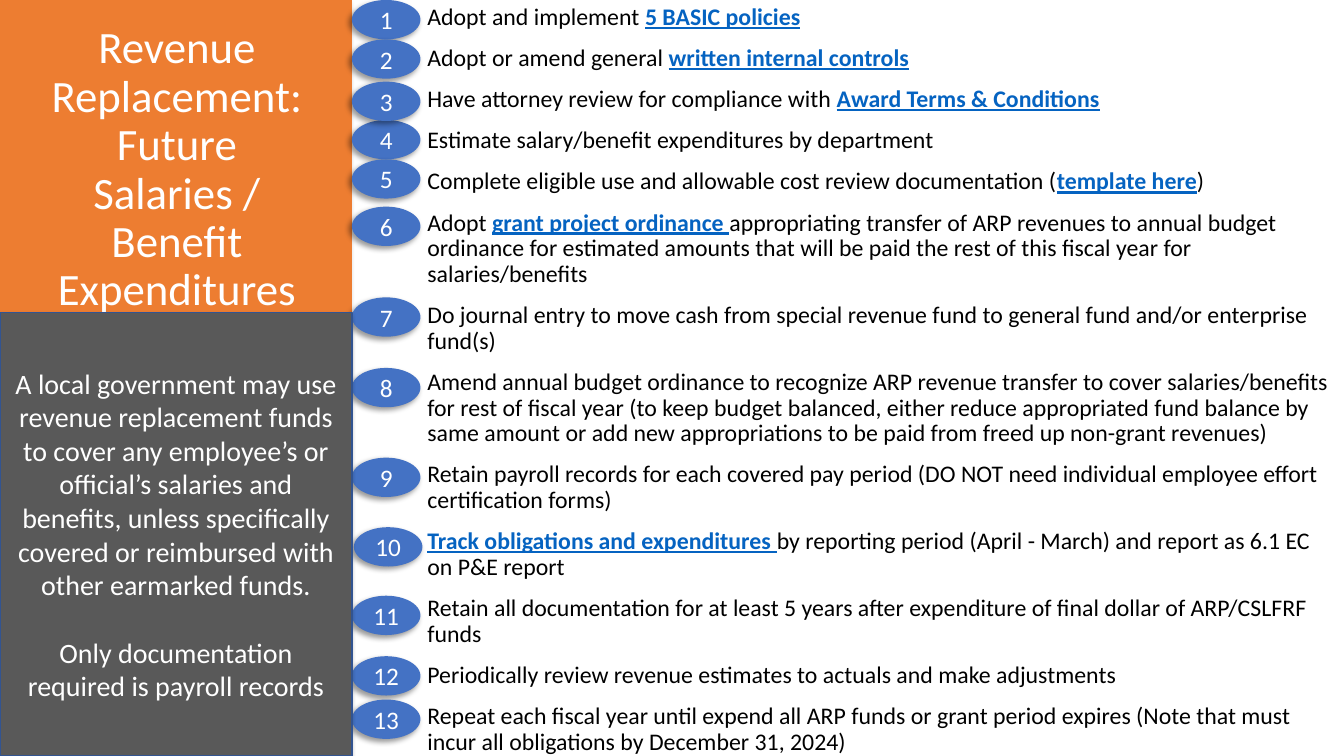
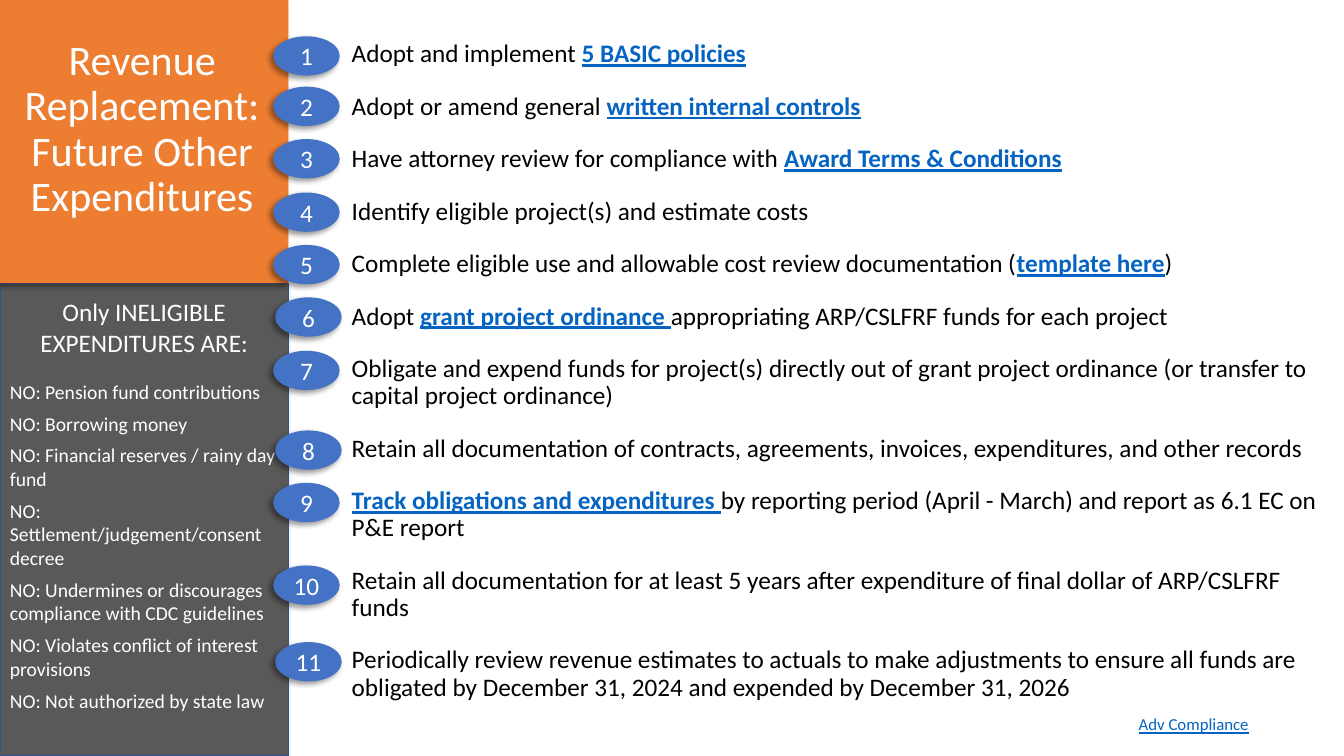
from lxml import etree
from pptx import Presentation
from pptx.dml.color import RGBColor
from pptx.enum.shapes import MSO_SHAPE
from pptx.enum.text import MSO_ANCHOR, PP_ALIGN
from pptx.oxml.ns import qn
from pptx.util import Inches, Pt

RECTANGLE, OVAL = MSO_SHAPE.RECTANGLE, MSO_SHAPE.OVAL
TOP, MIDDLE = MSO_ANCHOR.TOP, MSO_ANCHOR.MIDDLE
LEFT, CENTER = PP_ALIGN.LEFT, PP_ALIGN.CENTER

COLORS = {
    "orange": "ED7D31", "gray": "595959", "gray_edge": "325491", "blue": "4472C4",
    "link": "0563C1", "black": "000000", "white": "FFFFFF",
}
FONT = "Calibri"
BADGE_HEIGHT = 0.39

POLICIES = "Adopt and implement *5 BASIC policies*"
CONTROLS = "Adopt or amend general *written internal controls*"
ATTORNEY = "Have attorney review for compliance with *Award Terms & Conditions*"
COST_REVIEW = ("Complete eligible use and allowable cost review documentation "
               "(*template here*)")
TRACKING = ("*Track obligations and expenditures *by reporting period (April - March) "
            "and report as 6.1 EC on P&E report")
RETENTION = ("Retain all documentation for at least 5 years after expenditure of "
             "final dollar of ARP/CSLFRF funds")

SALARY_STEPS = [
    POLICIES,
    CONTROLS,
    ATTORNEY,
    "Estimate salary/benefit expenditures by department",
    COST_REVIEW,
    "Adopt *grant project ordinance *appropriating transfer of ARP revenues to annual "
    "budget ordinance for estimated amounts that will be paid the rest of this fiscal "
    "year for salaries/benefits",
    "Do journal entry to move cash from special revenue fund to general fund and/or "
    "enterprise fund(s)",
    "Amend annual budget ordinance to recognize ARP revenue transfer to cover "
    "salaries/benefits for rest of fiscal year (to keep budget balanced, either reduce "
    "appropriated fund balance by same amount or add new appropriations to be paid from "
    "freed up non-grant revenues)",
    "Retain payroll records for each covered pay period (DO NOT need individual employee "
    "effort certification forms)",
    TRACKING,
    RETENTION,
    "Periodically review revenue estimates to actuals and make adjustments",
    "Repeat each fiscal year until expend all ARP funds or grant period expires (Note "
    "that must incur all obligations by December 31, 2024)",
]
SALARY_BADGE_TOPS = [0, 0.39, 0.81, 1.19, 1.58, 2.05, 2.95, 3.65, 4.54, 5.23, 5.91,
                     6.51, 6.94]

OTHER_STEPS = [
    POLICIES,
    CONTROLS,
    ATTORNEY,
    "Identify eligible project(s) and estimate costs",
    COST_REVIEW,
    "Adopt *grant project ordinance *appropriating ARP/CSLFRF funds for each project",
    "Obligate and expend funds for project(s) directly out of grant project ordinance "
    "(or transfer to capital project ordinance)",
    "Retain all documentation of contracts, agreements, invoices, expenditures, and "
    "other records",
    TRACKING,
    RETENTION,
    "Periodically review revenue estimates to actuals to make adjustments to ensure all "
    "funds are obligated by December 31, 2024 and expended by December 31, 2026",
]
OTHER_BADGE_TOPS = [0.36, 0.86, 1.38, 1.91, 2.43, 2.95, 3.48, 4.27, 4.79, 5.61, 6.37]

INELIGIBLE = [
    "Pension fund contributions",
    "Borrowing money",
    "Financial reserves / rainy day fund",
    "Settlement/judgement/consent decree",
    "Undermines or discourages compliance with CDC guidelines",
    "Violates conflict of interest provisions",
    "Not authorized by state law",
]


def color(name):
    return RGBColor.from_string(COLORS[name])


class Deck:
    """Holds the shared style and the slide being built."""

    def __init__(self):
        self.presentation = Presentation()
        self.presentation.slide_width = Inches(13.33)
        self.presentation.slide_height = Inches(7.5)
        self.slide = None

    def new_slide(self):
        self.slide = self.presentation.slides.add_slide(self.presentation.slide_layouts[6])

    def shape(self, kind, box, fill, edge=None):
        """Add a filled shape with the soft shadow used throughout."""
        shape = self.slide.shapes.add_shape(kind, *map(Inches, box))
        shape.fill.solid()
        shape.fill.fore_color.rgb = color(fill)
        if edge:
            shape.line.color.rgb = color(edge)
            shape.line.width = Pt(1)
        else:
            shape.line.fill.background()
        shape.shadow.inherit = False
        effects = shape.element.spPr.find(qn("a:effectLst"))
        shadow = etree.SubElement(effects, qn("a:outerShdw"), blurRad=str(Pt(4)),
                                  dist=str(Pt(3)), dir="8100000", algn="tr",
                                  rotWithShape="0")
        shade = etree.SubElement(shadow, qn("a:srgbClr"), val=COLORS["black"])
        etree.SubElement(shade, qn("a:alpha"), val="40000")
        return shape

    def paragraph(self, frame, text, size, ink="white", **layout):
        """Append a paragraph; parts between asterisks get the link look."""
        paragraph = frame.paragraphs[0]
        if paragraph.runs:
            paragraph = frame.add_paragraph()
        for name, value in {"alignment": CENTER, **layout}.items():
            setattr(paragraph, name, value)
        for index, part in enumerate(text.split("*")):
            if not part:
                continue
            run = paragraph.add_run()
            run.text = part
            is_link = index % 2 == 1
            style = {"name": FONT, "size": Pt(size), "bold": is_link, "underline": is_link}
            for name, value in style.items():
                setattr(run.font, name, value)
            run.font.color.rgb = color("link" if is_link else ink)
        return paragraph

    def text_box(self, box, anchor=MIDDLE):
        frame = self.slide.shapes.add_textbox(*map(Inches, box)).text_frame
        frame.word_wrap = True
        frame.vertical_anchor = anchor
        return frame

    def title(self, box, text, size):
        self.paragraph(self.text_box(box), text, size, line_spacing=0.9)

    def title_band(self, width, height):
        self.shape(RECTANGLE, (0, 0, width, height), "orange")

    def side_panel(self, top, width):
        """Add the gray panel that reaches the slide bottom; return its text frame."""
        box = (0, top, width, 7.5 - top)
        frame = self.shape(RECTANGLE, box, "gray", "gray_edge").text_frame
        frame.word_wrap = True
        frame.vertical_anchor = MIDDLE
        return frame

    def steps(self, box, texts, size, gap):
        frame = self.text_box(box, TOP)
        for text in texts:
            self.paragraph(frame, text, size, "black", alignment=LEFT,
                           line_spacing=0.9, space_before=Pt(gap))

    def badges(self, left, width, tops, shifted):
        """Number the steps; the first three badges lie in front of the others."""
        numbered = list(enumerate(tops, 1))
        for number, top in numbered[3:] + numbered[:3]:
            nudge = 0.02 if number in shifted else 0
            badge = self.shape(OVAL, (left + nudge, top, width, BADGE_HEIGHT), "blue")
            badge.text_frame.vertical_anchor = MIDDLE
            self.paragraph(badge.text_frame, str(number), 18)


def salary_slide(deck):
    deck.new_slide()
    deck.title_band(3.49, 3.88)
    deck.title((0.23, 1.33, 3.05, 0.72),
               "Revenue Replacement: Future Salaries / Benefit Expenditures", 32)
    deck.steps((4.14, 0, 9.19, 7.1), SALARY_STEPS, 17, 11)
    deck.badges(3.49, 0.68, SALARY_BADGE_TOPS, {10})
    panel = deck.side_panel(3.1, 3.49)
    deck.paragraph(panel, "A local government may use revenue replacement funds to cover "
                   "any employee’s or official’s salaries and benefits, unless "
                   "specifically covered or reimbursed with other earmarked funds.", 20)
    deck.paragraph(panel, "Only documentation required is payroll records", 20,
                   space_before=Pt(24))


def other_slide(deck):
    deck.new_slide()
    panel = deck.side_panel(2.81, 2.86)
    panel.margin_bottom = Inches(0.35)
    deck.paragraph(panel, "Only INELIGIBLE EXPENDITURES ARE:", 18, space_after=Pt(10))
    for item in INELIGIBLE:
        deck.paragraph(panel, f"NO: {item}", 14, alignment=LEFT, space_before=Pt(6))
    deck.title_band(2.86, 2.81)
    deck.title((0.1, 0.93, 2.62, 0.72),
               "Revenue Replacement: Future Other Expenditures", 30)
    deck.steps((3.39, 0.36, 9.85, 7.14), OTHER_STEPS, 18, 18)
    deck.badges(2.71, 0.66, OTHER_BADGE_TOPS, {6, 8, 11})
    note = deck.paragraph(deck.text_box((10.86, 6.99, 1.96, 0.39)),
                          "Adv Compliance", 12, "link")
    note.runs[0].font.underline = True


def main():
    deck = Deck()
    salary_slide(deck)
    other_slide(deck)
    deck.presentation.save("out.pptx")


if __name__ == "__main__":
    main()
